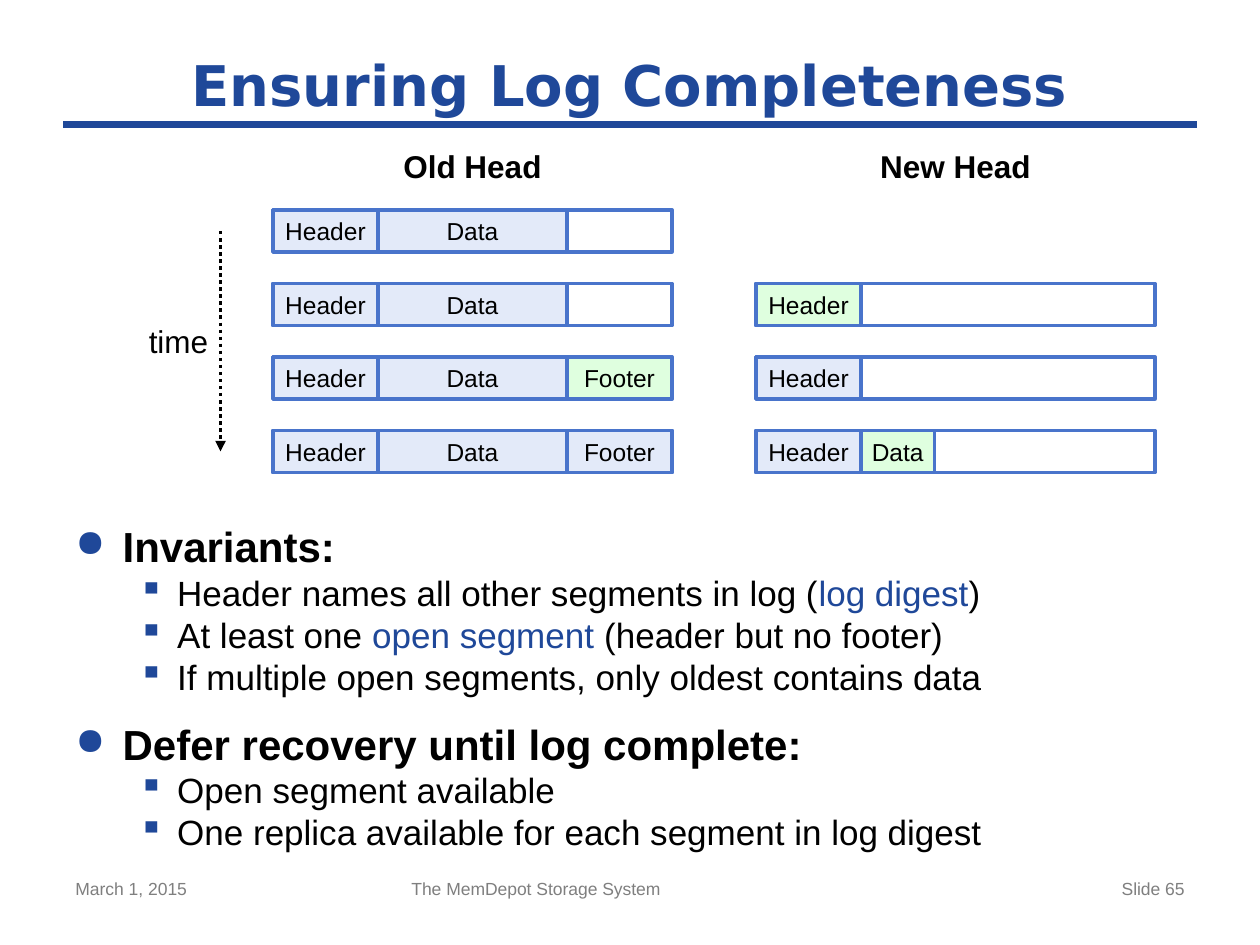
import pptx
import pptx.dml.color
import pptx.enum.dml
import pptx.enum.shapes
import pptx.enum.text
import pptx.oxml
import pptx.oxml.ns
import pptx.util

SCALE = 7620  # EMU in one px, 120 px to the inch
BLUE, EDGE, PALE, GREEN = "1F4899", "4974CB", "E3EAF9", "DFFFDF"
BLACK, WHITE, GREY = "000000", "FFFFFF", "7F7F7F"
ALIGN = pptx.enum.text.PP_ALIGN
ANCHOR = pptx.enum.text.MSO_ANCHOR


def px(*sizes):
    return [pptx.util.Emu(size * SCALE) for size in sizes]


def color(code):
    return pptx.dml.color.RGBColor.from_string(code)


def node(parent, tag, **attrs):
    """Append a drawing element with the given attributes."""
    item = parent.makeelement(pptx.oxml.ns.qn("a:" + tag), attrs)
    parent.append(item)
    return item


class Deck:
    font = "Arial"

    def __init__(self, wide, high):
        self.file = pptx.Presentation()
        self.file.slide_width, self.file.slide_height = px(wide, high)
        self.slide = self.file.slides.add_slide(self.file.slide_layouts[6])

    def style(self, run, size, code=BLACK, bold=False, font=None):
        run.font.name = font or self.font
        run.font.size = pptx.util.Pt(size)
        run.font.bold = bold
        run.font.color.rgb = color(code)

    def label(self, frame, words, size, align, anchor, inset, **look):
        """Fill a frame with one styled paragraph."""
        frame.word_wrap = True
        frame.vertical_anchor = anchor
        if not inset:
            frame.margin_left = frame.margin_right = 0
            frame.margin_top = frame.margin_bottom = 0
        frame.text = words
        para = frame.paragraphs[0]
        para.alignment = align
        for run in para.runs:
            self.style(run, size, **look)

    def text(self, words, box, size, align=ALIGN.CENTER, anchor=ANCHOR.TOP,
             inset=False, **look):
        frame = self.slide.shapes.add_textbox(*px(*box)).text_frame
        self.label(frame, words, size, align, anchor, inset, **look)

    def rect(self, box, fill, words=""):
        kind = pptx.enum.shapes.MSO_SHAPE.RECTANGLE
        shape = self.slide.shapes.add_shape(kind, *px(*box))
        shape.shadow.inherit = False
        shape.fill.solid()
        shape.fill.fore_color.rgb = color(fill)
        shape.line.color.rgb = color(EDGE)
        shape.line.width = pptx.util.Pt(2)
        if words:
            self.label(shape.text_frame, words, 14, ALIGN.CENTER,
                       ANCHOR.MIDDLE, False)

    def line(self, ends, code, width, arrow=False):
        """Draw a solid rule, or a dotted arrow."""
        kind = pptx.enum.shapes.MSO_CONNECTOR.STRAIGHT
        rule = self.slide.shapes.add_connector(kind, *px(*ends))
        rule.line.color.rgb = color(code)
        rule.line.width = pptx.util.Pt(width)
        props = rule._element.spPr
        if arrow:
            rule.line.dash_style = pptx.enum.dml.MSO_LINE.ROUND_DOT
            node(props.get_or_add_ln(), "tailEnd", type="triangle")
        node(props, "effectLst")

    def bullet(self, para, left, hang, mark, percent):
        props = para._p.get_or_add_pPr()
        props.set("marL", str(left * SCALE))
        props.set("indent", str(-hang * SCALE))
        node(node(props, "buClr"), "srgbClr", val=BLUE)
        node(props, "buSzPct", val=str(percent * 1000))
        node(props, "buChar", char=mark)

    def outline(self, box, items):
        """Add (level, parts) items; every second part is a blue term."""
        frame = self.slide.shapes.add_textbox(*px(*box)).text_frame
        frame.word_wrap = True
        for index, (level, parts) in enumerate(items):
            para = frame.add_paragraph() if index else frame.paragraphs[0]
            para.level = level
            para.space_before = pptx.util.Pt(0 if level else 12)
            for turn, part in enumerate(parts):
                run = para.add_run()
                run.text = part
                self.style(run, 20 if level else 24,
                           BLUE if turn % 2 else BLACK, not level)
            if level:
                self.bullet(para, 97, 37, "▪", 100)
            else:
                self.bullet(para, 45, 45, "●", 90)


HEAD, DATA, FOOT = ("Header", 100), ("Data", 180), ("Footer", 100)
FIRST = ("Data", 70)
OLD, NEW = 260, 720
TOP, STEP, WIDE, HIGH = 200, 70, 380, 40

# Per row: the cells of each log segment and the fill of its last cell
ROWS = [
    (([HEAD, DATA], PALE), None),
    (([HEAD, DATA], PALE), ([HEAD], GREEN)),
    (([HEAD, DATA, FOOT], GREEN), ([HEAD], PALE)),
    (([HEAD, DATA, FOOT], PALE), ([HEAD, FIRST], GREEN)),
]

POINTS = [
    (0, ["Invariants:"]),
    (1, ["Header names all other segments in log (", "log digest", ")"]),
    (1, ["At least one ", "open segment ", "(header but no footer)"]),
    (1, ["If multiple open segments, only oldest contains data"]),
    (0, ["Defer recovery until log complete:"]),
    (1, ["Open segment available"]),
    (1, ["One replica available for each segment in log digest"]),
]


def main():
    deck = Deck(1200, 900)
    deck.line((60, 119, 1140, 119), BLUE, 4)
    deck.text("Ensuring Log Completeness", (60, 40, 1080, 80), 32,
              anchor=ANCHOR.MIDDLE, inset=True, code=BLUE, bold=True,
              font="DejaVu Sans")

    for left, name in ((OLD, "Old Head"), (NEW, "New Head")):
        deck.text(name, (left, 140, WIDE, 36), 18, bold=True)
    for row, pair in enumerate(ROWS):
        top = TOP + row * STEP
        for left, segment in zip((OLD, NEW), pair):
            if not segment:
                continue
            cells, last = segment
            deck.rect((left, top, WIDE, HIGH), WHITE)
            for index, (name, wide) in enumerate(cells, 1):
                fill = last if index == len(cells) else PALE
                deck.rect((left, top, wide, HIGH), fill, name)
                left += wide

    deck.line((210, 220, 210, 430), BLACK, 2, arrow=True)
    deck.text("time", (120, 307, 100, 36), 18)
    deck.outline((60, 490, 1030, 314), POINTS)

    for words, left, wide, align in (
            ("March 1, 2015", 60, 280, ALIGN.LEFT),
            ("The MemDepot Storage System", 380, 450, ALIGN.LEFT),
            ("Slide 65", 860, 280, ALIGN.RIGHT)):
        deck.text(words, (left, 830, wide, 52), 10, align, inset=True,
                  code=GREY)
    deck.file.save("out.pptx")


if __name__ == "__main__":
    main()
